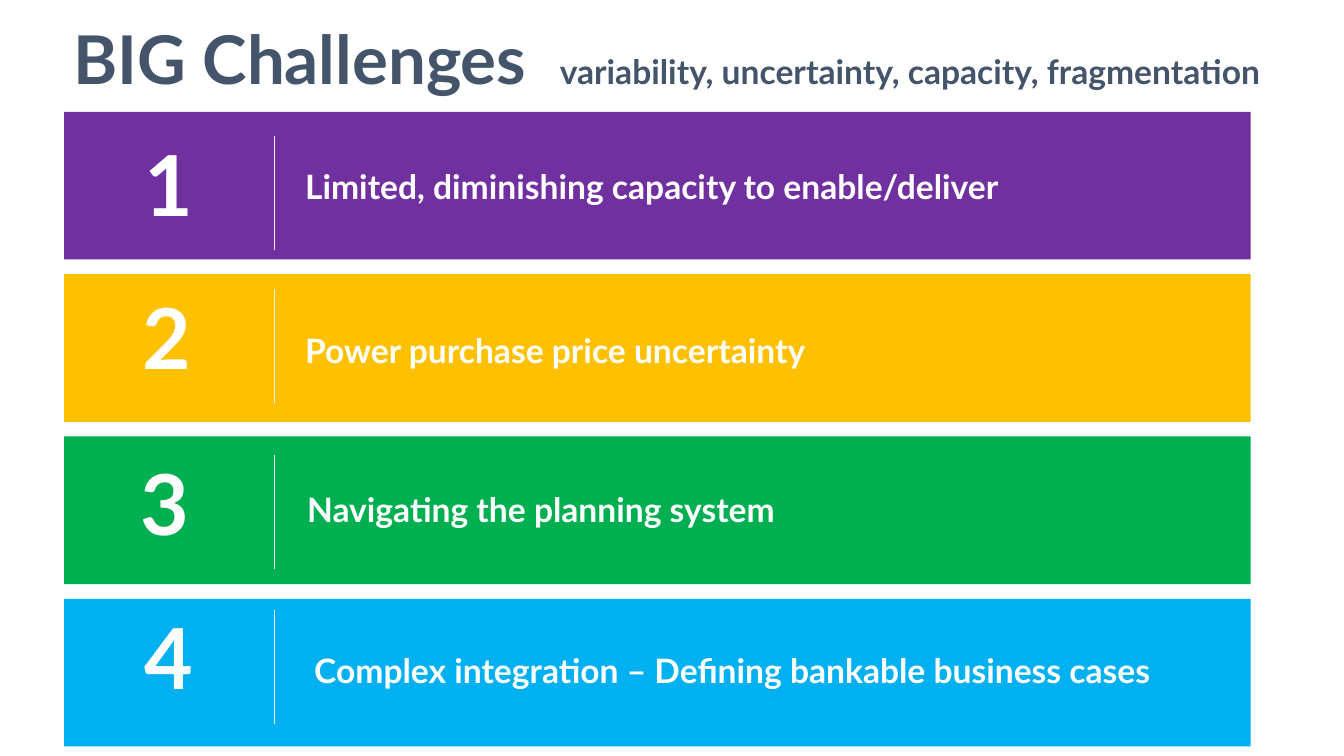
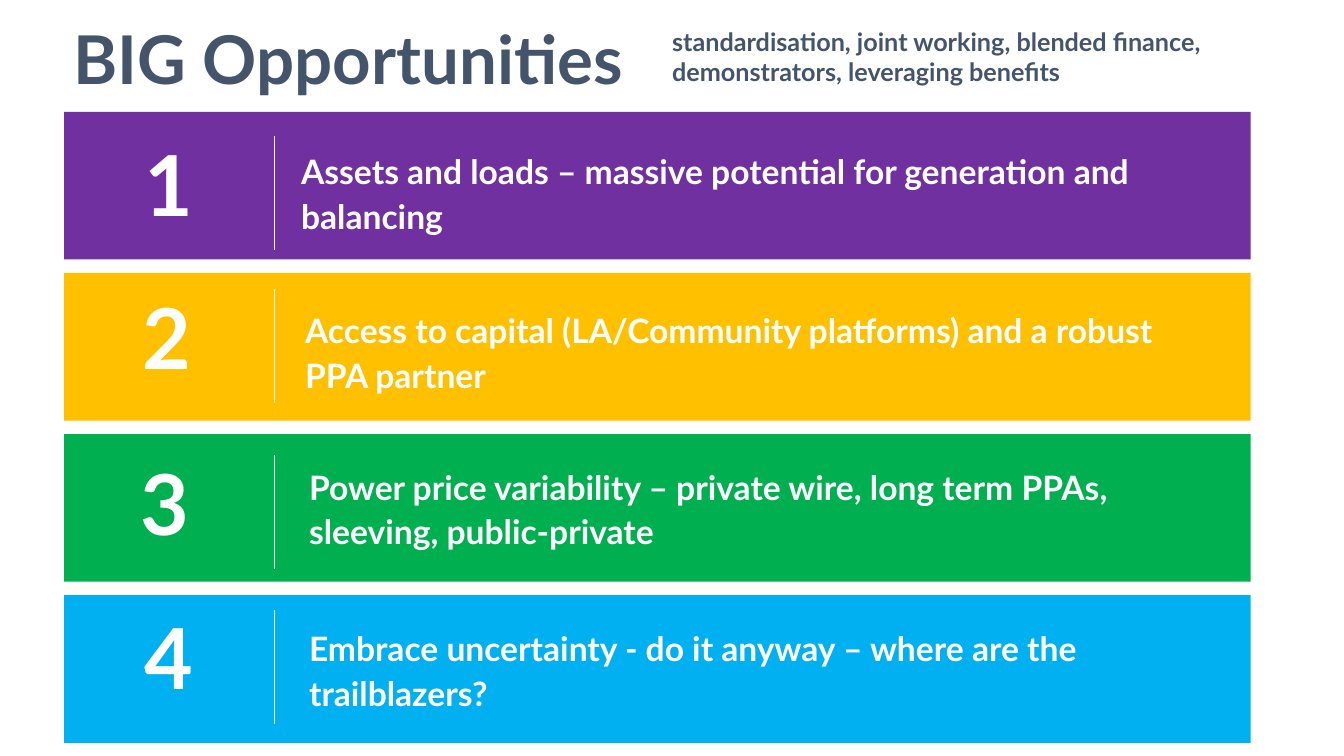
from dataclasses import dataclass

from lxml import etree
from pptx import Presentation
from pptx.dml.color import RGBColor
from pptx.enum.shapes import MSO_CONNECTOR, MSO_SHAPE
from pptx.enum.text import MSO_ANCHOR, MSO_AUTO_SIZE, PP_ALIGN
from pptx.oxml.ns import qn
from pptx.util import Cm, Pt

RECTANGLE = MSO_SHAPE.RECTANGLE
STRAIGHT = MSO_CONNECTOR.STRAIGHT
TOP = MSO_ANCHOR.TOP
NO_FIT = MSO_AUTO_SIZE.NONE
LEFT = PP_ALIGN.LEFT
TITLE_ONLY = 5


@dataclass(frozen=True)
class Theme:
    font: str = "Lato"
    heading: str = "44546A"
    light: str = "FFFFFF"
    divider: str = "F1F0F0"
    bands: tuple = ("7030A0", "FFC000", "00B050", "00B0F0")
    title_size: int = 48
    number_size: int = 60
    label_size: int = 24
    divider_width: float = 0.14


# Shared layout, in centimetres
MARGIN = 1.6
RIGHT_EDGE = 33.6
BAND_LEFT, BAND_TOP, BAND_WIDTH, BAND_HEIGHT = 1.62, 2.82, 29.9, 3.72
NUMBER_PLACES = ((3.12, 3.2), (3.07, 7.06), (3.02, 11.25), (3.12, 15.14))
DIVIDER_LEFT, DIVIDER_OFFSET, DIVIDER_HEIGHT = 6.9, 0.22, 2.88
LABEL_WIDTH = 23.1


class Deck:
    """Holds the theme and the current slide."""

    def __init__(self, theme):
        self.theme = theme
        self.presentation = Presentation()
        self.presentation.slide_width = Cm(33.87)
        self.presentation.slide_height = Cm(19.05)
        self.slide = None

    def add_slide(self):
        layout = self.presentation.slide_layouts[TITLE_ONLY]
        self.slide = self.presentation.slides.add_slide(layout)

    def set_text(self, shape, text, size, color, inset=0.25, spacing=1.0):
        frame = shape.text_frame
        frame.word_wrap = True
        frame.auto_size = NO_FIT
        frame.vertical_anchor = TOP
        frame.margin_left = frame.margin_right = Cm(inset)
        frame.margin_top = frame.margin_bottom = Cm(0.13)
        paragraph = frame.paragraphs[0]
        paragraph.text = text
        paragraph.alignment = LEFT
        paragraph.line_spacing = spacing
        font = paragraph.font
        font.name = self.theme.font
        font.size = Pt(size)
        font.bold = True
        font.color.rgb = RGBColor.from_string(color)

    def title(self, text, width):
        title = self.slide.shapes.title
        title.left, title.top = Cm(MARGIN), Cm(0.3)
        title.width, title.height = Cm(width), Cm(2.31)
        self.set_text(title, text, self.theme.title_size, self.theme.heading)

    def text(self, text, left, top, width, height, size, color, **style):
        box = self.slide.shapes.add_textbox(
            Cm(left), Cm(top), Cm(width), Cm(height))
        self.set_text(box, text, size, color, **style)

    def band(self, top, color):
        band = self.slide.shapes.add_shape(
            RECTANGLE, Cm(BAND_LEFT), Cm(top), Cm(BAND_WIDTH), Cm(BAND_HEIGHT))
        band.shadow.inherit = False
        band.fill.solid()
        band.fill.fore_color.rgb = RGBColor.from_string(color)
        band.line.fill.background()

    def divider(self, top):
        line = self.slide.shapes.add_connector(
            STRAIGHT, Cm(DIVIDER_LEFT), Cm(top),
            Cm(DIVIDER_LEFT), Cm(top + DIVIDER_HEIGHT))
        line.line.color.rgb = RGBColor.from_string(self.theme.divider)
        line.line.width = Pt(self.theme.divider_width)
        etree.SubElement(line._element.spPr, qn("a:effectLst"))

    def numbered_bands(self, labels, pitch, label_height):
        theme = self.theme
        rows = zip(theme.bands, NUMBER_PLACES, labels)
        for index, (color, number_place, label) in enumerate(rows):
            number_left, number_top = number_place
            text, left, top = label
            self.band(BAND_TOP + index * pitch, color)
            self.text(str(index + 1), number_left, number_top, 3.56, 3.07,
                      theme.number_size, theme.light, inset=0.51)
            self.divider(number_top + DIVIDER_OFFSET)
            self.text(text, left, top, LABEL_WIDTH, label_height,
                      theme.label_size, theme.light, spacing=1.1)


@dataclass(frozen=True)
class Page:
    title: str
    subtitle: str
    subtitle_place: tuple  # left, top, height
    subtitle_size: int
    pitch: float
    label_height: float
    labels: tuple  # text, left, top


PAGES = (
    Page("BIG Challenges",
         "variability, uncertainty, capacity, fragmentation",
         (13.86, 1.15, 1.28), 24, 4.09, 1.3,
         (("Limited, diminishing capacity to enable/deliver", 7.44, 3.96),
          ("Power purchase price uncertainty", 7.44, 8.08),
          ("Navigating the planning system", 7.49, 12.09),
          ("Complex integration – Defining bankable business cases",
           7.67, 16.15))),
    Page("BIG Opportunities",
         "standardisation, joint working, blended finance, "
         "demonstrators, leveraging benefits",
         (16.69, 0.53, 1.8), 18, 4.06, 2.41,
         (("Assets and loads – massive potential for generation and balancing",
           7.34, 3.58),
          ("Access to capital (LA/Community platforms) and a robust "
           "PPA partner", 7.44, 7.59),
          ("Power price variability – private wire, long term PPAs, "
           "sleeving, public-private", 7.54, 11.53),
          ("Embrace uncertainty - do it anyway – where are the trailblazers?",
           7.54, 15.6))),
)


def main():
    deck = Deck(Theme())
    for page in PAGES:
        deck.add_slide()
        # Heading
        left, top, height = page.subtitle_place
        deck.title(page.title, left - MARGIN)
        deck.text(page.subtitle, left, top, RIGHT_EDGE - left, height,
                  page.subtitle_size, deck.theme.heading)
        # Numbered rows
        deck.numbered_bands(page.labels, page.pitch, page.label_height)
    deck.presentation.save("out.pptx")


if __name__ == "__main__":
    main()
